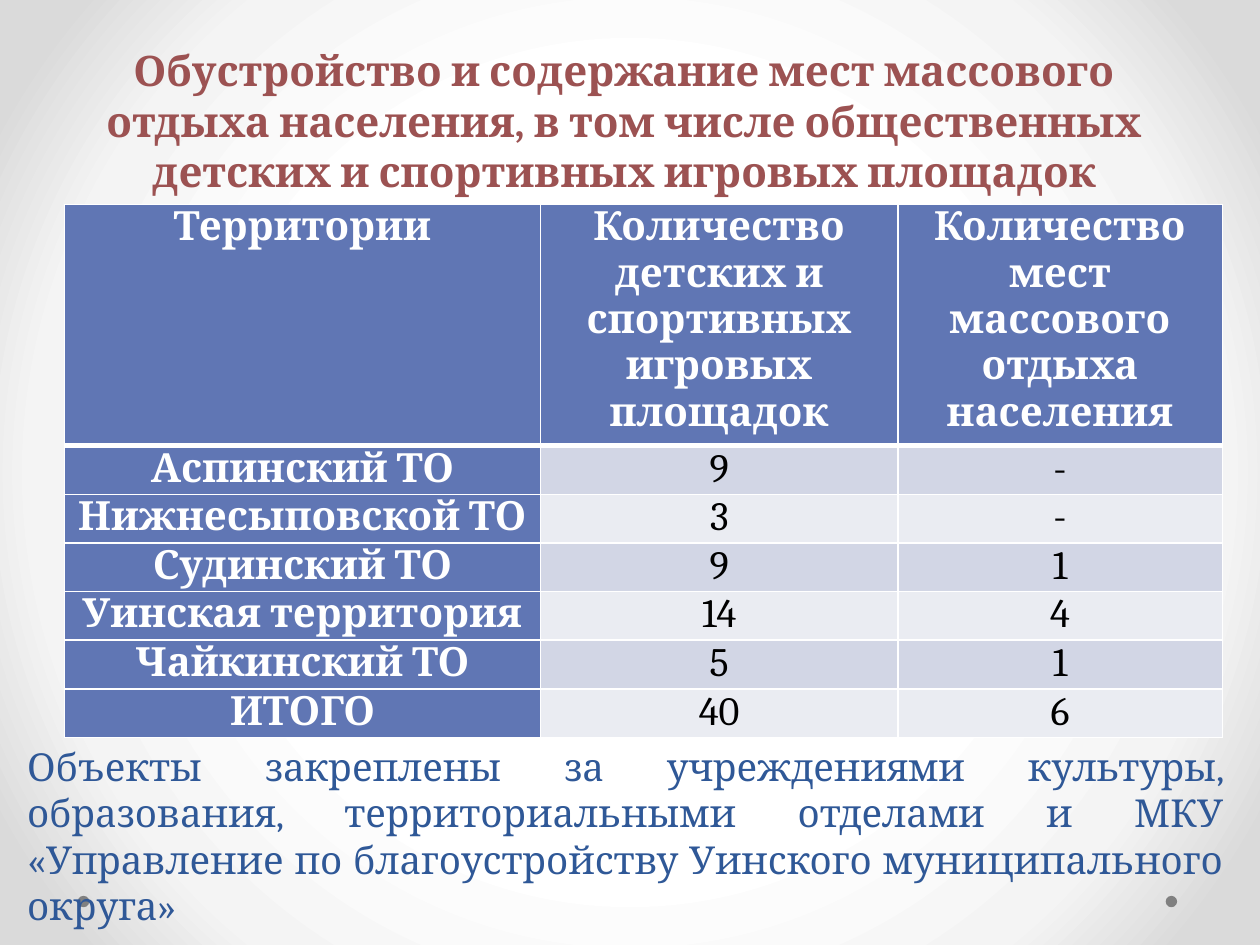
"""Build a slide with a table of playgrounds and recreation areas by territory."""
from dataclasses import dataclass

import lxml.etree
import pptx
import pptx.dml.color
import pptx.enum.shapes
import pptx.enum.text
import pptx.oxml.ns
import pptx.util

Cm = pptx.util.Cm
Pt = pptx.util.Pt
qn = pptx.oxml.ns.qn
ALIGN = pptx.enum.text.PP_ALIGN
ANCHOR = pptx.enum.text.MSO_ANCHOR


@dataclass(frozen=True)
class Theme:
    font: str = "Cambria"
    title: str = "9C5252"
    note: str = "2F5897"
    head: str = "6076B4"
    bands: tuple = ("D2D6E5", "EAECF2")
    light: str = "FFFFFF"
    dark: str = "000000"
    dot: str = "808080"
    stops: tuple = ((50, "FFFFFF"), (76, "F4F4F4"), (92, "DADADA"))
    title_size: int = 24
    table_size: int = 23
    note_size: int = 22


def rgb(value):
    return pptx.dml.color.RGBColor.from_string(value)


def sub(parent, tag, **attrs):
    return lxml.etree.SubElement(parent, qn(tag), attrs)


def put_text(tf, text, *, font, size, color, bold=False, align=ALIGN.CENTER):
    p = tf.paragraphs[0]
    p.alignment = align
    r = p.add_run()
    r.text = text
    r.font.name = font
    r.font.size = Pt(size)
    r.font.bold = bold
    r.font.color.rgb = rgb(color)


class SlideBuilder:
    def __init__(self, prs, theme):
        self.theme = theme
        self.s = prs.slides.add_slide(prs.slide_layouts[6])

    def background(self):
        self.s.background.fill.gradient()
        grad = self.s.element.find(".//" + qn("a:gradFill"))
        for child in list(grad):
            grad.remove(child)
        stops = sub(grad, "a:gsLst")
        for pos, color in self.theme.stops:
            stop = sub(stops, "a:gs", pos=str(pos * 1000))
            sub(stop, "a:srgbClr", val=color)
        circle = sub(grad, "a:path", path="circle")
        sub(circle, "a:fillToRect", **dict.fromkeys("ltrb", "50000"))

    def dot(self, x, y, size):
        sp = self.s.shapes.add_shape(
            pptx.enum.shapes.MSO_SHAPE.OVAL, Cm(x), Cm(y), Cm(size), Cm(size))
        sp.shadow.inherit = False
        sp.fill.solid()
        sp.fill.fore_color.rgb = rgb(self.theme.dot)
        sp.line.fill.background()

    def text(self, text, x, y, w, h, anchor=ANCHOR.TOP, **fmt):
        tf = self.s.shapes.add_textbox(Cm(x), Cm(y), Cm(w), Cm(h)).text_frame
        tf.word_wrap = True
        tf.vertical_anchor = anchor
        put_text(tf, text, font=self.theme.font, **fmt)

    def borders(self, cell, bottom):
        tc_pr = cell._tc.get_or_add_tcPr()
        widths = {"a:lnL": 1, "a:lnR": 1, "a:lnT": 1, "a:lnB": bottom}
        for i, (tag, width) in enumerate(widths.items()):
            ln = lxml.etree.Element(qn(tag), w=str(Pt(width)))
            sub(sub(ln, "a:solidFill"), "a:srgbClr", val=self.theme.light)
            tc_pr.insert(i, ln)

    def table(self, rows, x, y, widths, head_height, row_height):
        t = self.theme
        heights = [head_height] + [row_height] * (len(rows) - 1)
        table = self.s.shapes.add_table(
            len(rows), len(widths), Cm(x), Cm(y),
            Cm(sum(widths)), Cm(sum(heights))).table
        for column, width in zip(table.columns, widths):
            column.width = Cm(width)
        for i, (values, height) in enumerate(zip(rows, heights)):
            table.rows[i].height = Cm(height)
            for j, value in enumerate(values):
                cell = table.cell(i, j)
                head = i == 0 or j == 0
                cell.margin_left = cell.margin_right = Cm(0.18)
                cell.margin_top = cell.margin_bottom = 0
                cell.fill.solid()
                cell.fill.fore_color.rgb = rgb(t.head if head else t.bands[(i - 1) % 2])
                self.borders(cell, bottom=1 if i else 3)
                put_text(cell.text_frame, value, font=t.font, size=t.table_size,
                         color=t.light if head else t.dark, bold=head)


def main():
    prs = pptx.Presentation()
    prs.slide_width, prs.slide_height = Cm(25.4), Cm(19.05)
    theme = Theme()
    slide = SlideBuilder(prs, theme)
    slide.background()
    for x in (23.5, 1.57):
        slide.dot(x, 18.06, 0.23)
    slide.text(
        "Обустройство и содержание мест массового отдыха населения, "
        "в том числе общественных детских и спортивных игровых площадок",
        1.19, 0.76, 22.78, 3.33, ANCHOR.MIDDLE,
        size=theme.title_size, color=theme.title, bold=True)
    slide.text(
        "Объекты закреплены за учреждениями культуры, образования, "
        "территориальными отделами и МКУ «Управление по благоустройству "
        "Уинского муниципального округа»",
        0.3, 14.86, 24.61, 4.01,
        size=theme.note_size, color=theme.note, align=ALIGN.JUSTIFY)
    rows = (
        ("Территории", "Количество детских и спортивных игровых площадок",
         "Количество мест массового отдыха населения"),
        ("Аспинский ТО", "9", "-"),
        ("Нижнесыповской ТО", "3", "-"),
        ("Судинский ТО", "9", "1"),
        ("Уинская территория", "14", "4"),
        ("Чайкинский ТО", "5", "1"),
        ("ИТОГО", "40", "6"),
    )
    slide.table(rows, 1.3, 4.12, (9.6, 7.2, 6.54), 4.84, 0.98)
    prs.save("out.pptx")


if __name__ == "__main__":
    main()
